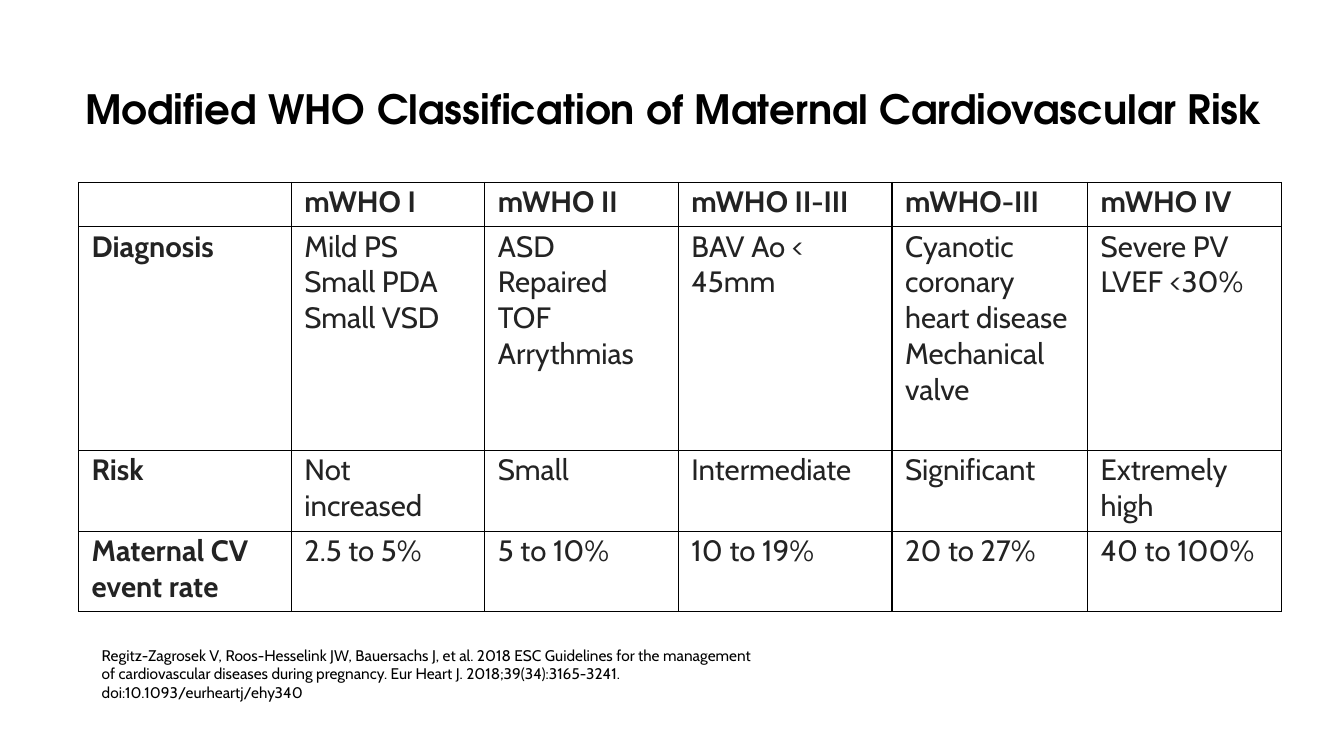
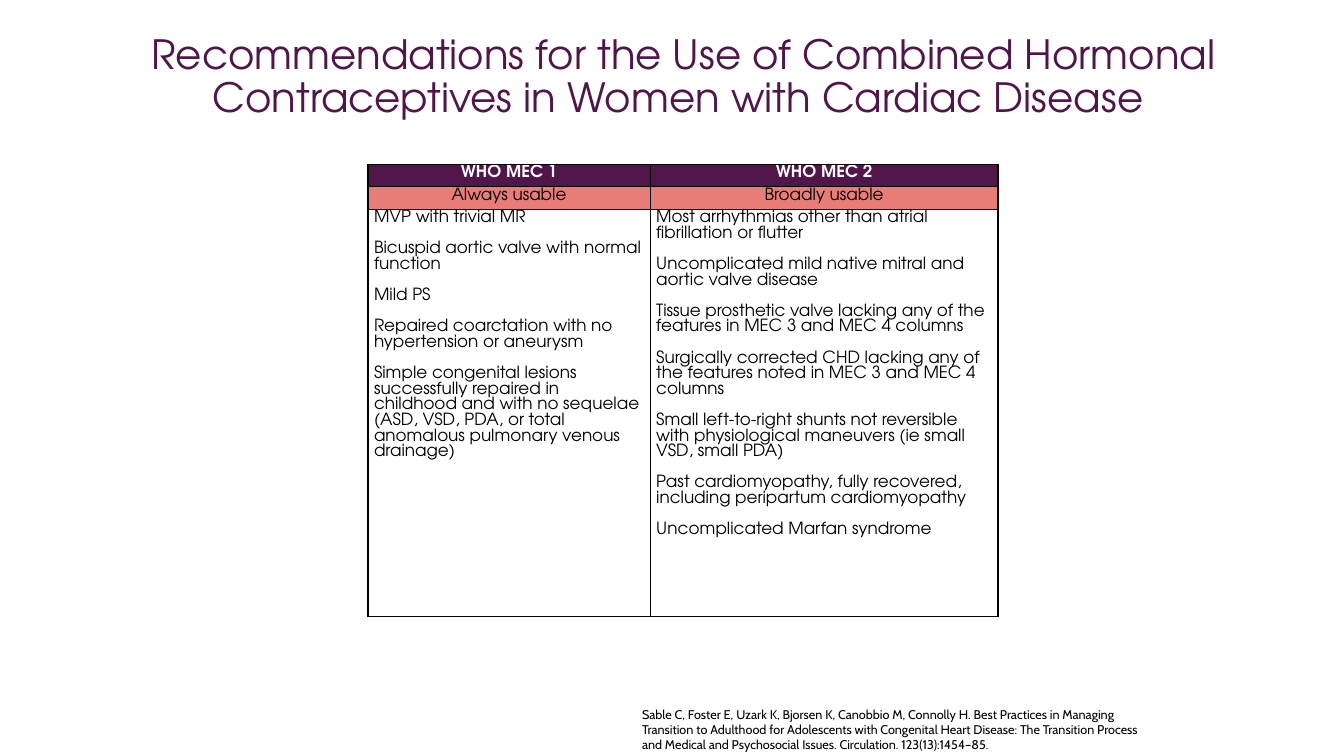
from lxml.etree import SubElement
from pptx import Presentation
from pptx.dml.color import RGBColor
from pptx.enum.text import MSO_ANCHOR, MSO_AUTO_SIZE, PP_ALIGN
from pptx.oxml.ns import qn
from pptx.util import Inches, Pt

COLORS = {
    "black": "000000",
    "ink": "232323",
    "white": "FFFFFF",
    "plum": "501649",
    "coral": "E87C76",
}
HEADING_FONT = "TeX Gyre Adventor"
TEXT_FONT = "Cabin"
TITLE_SIZE = 28.8

# Grid of 100 columns by 100 rows
SLIDE_WIDTH, SLIDE_HEIGHT = Inches(13.33), Inches(7.5)
COLUMN, ROW = SLIDE_WIDTH / 100, SLIDE_HEIGHT / 100
TITLE_WIDTH, TITLE_HEIGHT = 91.95, 10.8

# Text of the risk table: each cell holds a list of lines
RISK_ROWS = [
    [[], ["mWHO I"], ["mWHO II"], ["mWHO II-III"], ["mWHO-III"], ["mWHO IV"]],
    [
        ["Diagnosis"],
        ["Mild PS", "Small PDA", "Small VSD"],
        ["ASD", "Repaired TOF", "Arrythmias"],
        ["BAV Ao < 45mm"],
        ["Cyanotic coronary heart disease", "Mechanical valve"],
        ["Severe PV", "LVEF <30%"],
    ],
    [["Risk"], ["Not increased"], ["Small"], ["Intermediate"],
     ["Significant"], ["Extremely high"]],
    [["Maternal CV event rate"], ["2.5 to 5%"], ["5 to 10%"], ["10 to 19%"],
     ["20 to 27%"], ["40 to 100%"]],
]
RISK_SOURCE = (
    "Regitz-Zagrosek V, Roos-Hesselink JW, Bauersachs J, et al. 2018 ESC "
    "Guidelines for the management of cardiovascular diseases during "
    "pregnancy. Eur Heart J. 2018;39(34):3165-3241. "
    "doi:10.1093/eurheartj/ehy340"
)

# Text of the contraceptives table
MEC_ROWS = [
    [["WHO MEC 1"], ["WHO MEC 2"]],
    [["Always usable"], ["Broadly usable"]],
    [
        [
            "MVP with trivial MR",
            "Bicuspid aortic valve with normal function",
            "Mild PS",
            "Repaired coarctation with no hypertension or aneurysm",
            "Simple congenital lesions successfully repaired in childhood and "
            "with no sequelae (ASD, VSD, PDA, or total anomalous pulmonary "
            "venous drainage)",
        ],
        [
            "Most arrhythmias other than atrial fibrillation or flutter",
            "Uncomplicated mild native mitral and aortic valve disease",
            "Tissue prosthetic valve lacking any of the features in MEC 3 and "
            "MEC 4 columns",
            "Surgically corrected CHD lacking any of the features noted in "
            "MEC 3 and MEC 4 columns",
            "Small left-to-right shunts not reversible with physiological "
            "maneuvers (ie small VSD, small PDA)",
            "Past cardiomyopathy, fully recovered, including peripartum "
            "cardiomyopathy",
            "Uncomplicated Marfan syndrome",
        ],
    ],
]
MEC_SOURCE = (
    "Sable C, Foster E, Uzark K, Bjorsen K, Canobbio M, Connolly H. Best "
    "Practices in Managing Transition to Adulthood for Adolescents with "
    "Congenital Heart Disease: The Transition Process and Medical and "
    "Psychosocial Issues. Circulation. 123(13):1454–85."
)


def rgb(color):
    return RGBColor.from_string(COLORS[color])


def grid(left, top, width, height):
    """Turn grid columns and rows into a position and size."""
    return (int(left * COLUMN), int(top * ROW),
            int(width * COLUMN), int(height * ROW))


def style(paragraph, font_name, size, color, bold=False):
    font = paragraph.font
    font.name, font.size, font.bold = font_name, Pt(size), bold
    font.color.rgb = rgb(color)


def add_titled_slide(deck, text, left, top, color, bold=False):
    slide = deck.slides.add_slide(deck.slide_layouts[5])
    title = slide.shapes.title
    title.left, title.top, title.width, title.height = grid(
        left, top, TITLE_WIDTH, TITLE_HEIGHT)
    frame = title.text_frame
    frame.text = text
    frame.word_wrap = True
    frame.auto_size = MSO_AUTO_SIZE.NONE
    frame.vertical_anchor = MSO_ANCHOR.MIDDLE
    heading = frame.paragraphs[0]
    heading.alignment = PP_ALIGN.CENTER
    heading.line_spacing = 0.9
    style(heading, HEADING_FONT, TITLE_SIZE, color, bold)
    return slide


def add_citation(slide, text, place, size):
    frame = slide.shapes.add_textbox(*grid(*place)).text_frame
    frame.word_wrap = True
    frame.text = text
    style(frame.paragraphs[0], TEXT_FONT, size, "black")


def add_borders(cell):
    properties = cell._tc.get_or_add_tcPr()
    for side in ("a:lnL", "a:lnR", "a:lnT", "a:lnB"):
        line = SubElement(properties, qn(side), w=str(Pt(1)))
        fill = SubElement(line, qn("a:solidFill"))
        SubElement(fill, qn("a:srgbClr"), val=COLORS["black"])


def add_bordered_table(slide, rows, left, top, widths, heights, side_inset,
                       top_inset):
    """Add the table with borders and text; return it for formatting."""
    table = slide.shapes.add_table(
        len(rows), len(widths),
        *grid(left, top, sum(widths), sum(heights))).table
    table.first_row = table.horz_banding = False
    for column, width in zip(table.columns, widths):
        column.width = int(width * COLUMN)
    for row, height, texts in zip(table.rows, heights, rows):
        row.height = int(height * ROW)
        for cell, lines in zip(row.cells, texts):
            cell.margin_left = cell.margin_right = Inches(side_inset)
            cell.margin_top, cell.margin_bottom = Inches(top_inset), 0
            add_borders(cell)
            cell.fill.solid()
            cell.fill.fore_color.rgb = rgb("white")
            cell.text_frame.text = "\n".join(lines)
    return table


def build_risk_slide(deck):
    slide = add_titled_slide(
        deck, "Modified WHO Classification of Maternal Cardiovascular Risk ",
        4.58, 9.33, "black", bold=True)
    table = add_bordered_table(
        slide, RISK_ROWS, 5.85, 24.13,
        widths=[15.83, 14.4, 14.4, 15.9, 14.55, 14.4],
        heights=[5.87, 29.6, 10.67, 10.67], side_inset=0.13, top_inset=0.02)
    # Header row and label column are bold
    for row_index, row in enumerate(table.rows):
        for column_index, cell in enumerate(row.cells):
            is_label = row_index == 0 or column_index == 0
            for paragraph in cell.text_frame.paragraphs:
                style(paragraph, TEXT_FONT, 21, "ink", is_label)
    add_citation(slide, RISK_SOURCE, (6.83, 84.8, 50.03, 8.8), 11)


def build_contraceptives_slide(deck):
    slide = add_titled_slide(
        deck, "Recommendations for the Use of Combined Hormonal "
        "Contraceptives in Women with Cardiac Disease ", 4.88, 4.93, "plum")
    table = add_bordered_table(
        slide, MEC_ROWS, 27.38, 21.73, widths=[21, 25.88],
        heights=[2.98, 2.98, 53.9], side_inset=0.06, top_inset=0.01)
    # Fill, text colour, weight and alignment of each row
    row_styles = [
        ("plum", "white", True, PP_ALIGN.CENTER),
        ("coral", "black", False, PP_ALIGN.CENTER),
        ("white", "black", False, PP_ALIGN.LEFT),
    ]
    line_pitch = Pt(11.15)
    for row, (fill, color, bold, alignment) in zip(table.rows, row_styles):
        for cell in row.cells:
            cell.fill.fore_color.rgb = rgb(fill)
            for index, paragraph in enumerate(cell.text_frame.paragraphs):
                paragraph.alignment = alignment
                paragraph.line_spacing = line_pitch
                if index:
                    paragraph.space_before = line_pitch
                style(paragraph, HEADING_FONT, 12, color, bold)
    add_citation(slide, MEC_SOURCE, (47.03, 92.8, 38.7, 7.47), 9)


def main():
    deck = Presentation()
    deck.slide_width, deck.slide_height = SLIDE_WIDTH, SLIDE_HEIGHT
    build_risk_slide(deck)
    build_contraceptives_slide(deck)
    deck.save("out.pptx")


if __name__ == "__main__":
    main()
